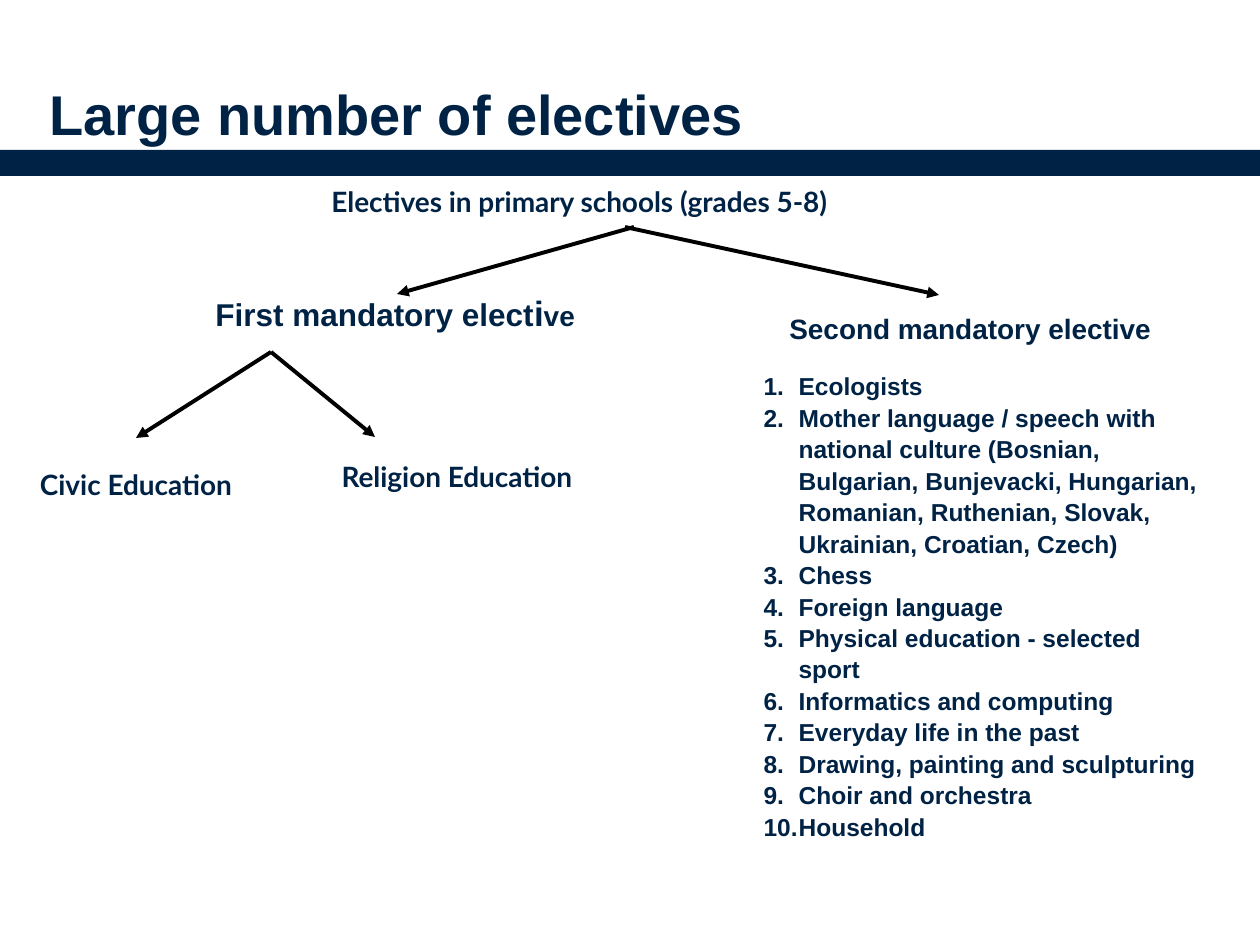
from pptx import Presentation
from pptx.dml.color import RGBColor
from pptx.enum.shapes import MSO_CONNECTOR, MSO_SHAPE
from pptx.enum.text import MSO_ANCHOR, MSO_AUTO_SIZE, PP_ALIGN
from pptx.oxml.ns import qn
from pptx.util import Pt
from lxml.etree import SubElement

NAVY, BLACK = "002345", "000000"
TITLE = "Large number of electives"

# Each label: left, top, width, height, alignment, font, runs of (text, size)
LABELS = [
    (319, 178, 572, 47, PP_ALIGN.LEFT, "Lato",
     [("Electives in primary schools (grades 5-8)", 16)]),
    (203, 285, 400, 55, PP_ALIGN.LEFT, "Arial",
     [("First mandatory elect", 18), ("i", 20), ("ve", 16)]),
    (777, 305, 407, 47, PP_ALIGN.LEFT, "Arial",
     [("Second mandatory elective", 16)]),
    (21, 461, 230, 47, PP_ALIGN.CENTER, "Lato", [("Civic Education", 16)]),
    (312, 453, 290, 47, PP_ALIGN.CENTER, "Lato", [("Religion Education", 16)]),
]

SUBJECTS = [
    "Ecologists",
    "Mother language / speech with national culture (Bosnian, Bulgarian, "
    "Bunjevacki, Hungarian, Romanian, Ruthenian, Slovak, Ukrainian, Croatian, Czech)",
    "Chess",
    "Foreign language",
    "Physical education - selected sport",
    "Informatics and computing",
    "Everyday life in the past",
    "Drawing, painting and sculpturing",
    "Choir and orchestra",
    "Household",
]

# Start x, y, end x, y
ARROWS = [
    (634, 227, 397, 294),
    (625, 227, 939, 295),
    (271, 352, 375, 437),
    (271, 352, 136, 438),
]


def px(length):
    return round(length * 914400 / 126)


def color(value):
    return RGBColor.from_string(value)


def place(shape, *bounds):
    shape.left, shape.top, shape.width, shape.height = map(px, bounds)


def style(font, name, size=None):
    font.name, font.bold = name, True
    font.color.rgb = color(NAVY)
    if size:
        font.size = Pt(size)


def add_title(page):
    title = page.shapes.title
    place(title, 49, 42, 1166, 105)
    frame = title.text_frame
    frame.text = TITLE
    frame.auto_size = MSO_AUTO_SIZE.NONE
    frame.vertical_anchor = MSO_ANCHOR.BOTTOM
    frame.margin_left = frame.margin_right = frame.margin_top = frame.margin_bottom = 0
    para = frame.paragraphs[0]
    para.alignment = PP_ALIGN.LEFT
    style(para.font, "Arial", 32)


def add_bar(page):
    bar = page.shapes.add_shape(MSO_SHAPE.RECTANGLE, 0, px(150), px(1260), px(26))
    bar.shadow.inherit = False
    bar.fill.solid()
    bar.fill.fore_color.rgb = color(NAVY)
    bar.line.fill.background()


def add_label(page, left, top, width, height, alignment, font_name, runs):
    box = page.shapes.add_textbox(*map(px, (left, top, width, height)))
    box.text_frame.word_wrap = True
    para = box.text_frame.paragraphs[0]
    para.alignment = alignment
    for text, size in runs:
        span = para.add_run()
        span.text = text
        style(span.font, font_name, size)


def add_arrow(page, *ends):
    arrow = page.shapes.add_connector(MSO_CONNECTOR.STRAIGHT, *map(px, ends))
    arrow.line.color.rgb = color(BLACK)
    arrow.line.width = Pt(2.25)
    SubElement(arrow.line._get_or_add_ln(), qn("a:tailEnd"), type="triangle")
    SubElement(arrow._element.spPr, qn("a:effectLst"))


def add_subjects(page):
    body = page.placeholders[1]
    place(body, 751, 363, 465, 498)
    frame = body.text_frame
    frame.text = "\n".join(SUBJECTS)
    frame.auto_size = MSO_AUTO_SIZE.NONE
    for para in frame.paragraphs:
        properties = para._p.get_or_add_pPr()
        properties.set("marL", str(px(35)))
        properties.set("indent", str(px(-35)))
        SubElement(properties, qn("a:buFont"), typeface="+mj-lt")
        SubElement(properties, qn("a:buAutoNum"), type="arabicPeriod")
        para.line_spacing = 1.07
        para.space_before = Pt(0)
        style(para.font, "Arial", 14)


def main():
    deck = Presentation()
    deck.slide_width, deck.slide_height = px(1260), px(945)
    page = deck.slides.add_slide(deck.slide_layouts[1])
    add_title(page)
    add_bar(page)
    for label in LABELS:
        add_label(page, *label)
    for arrow in ARROWS:
        add_arrow(page, *arrow)
    add_subjects(page)
    deck.save("out.pptx")


if __name__ == "__main__":
    main()
